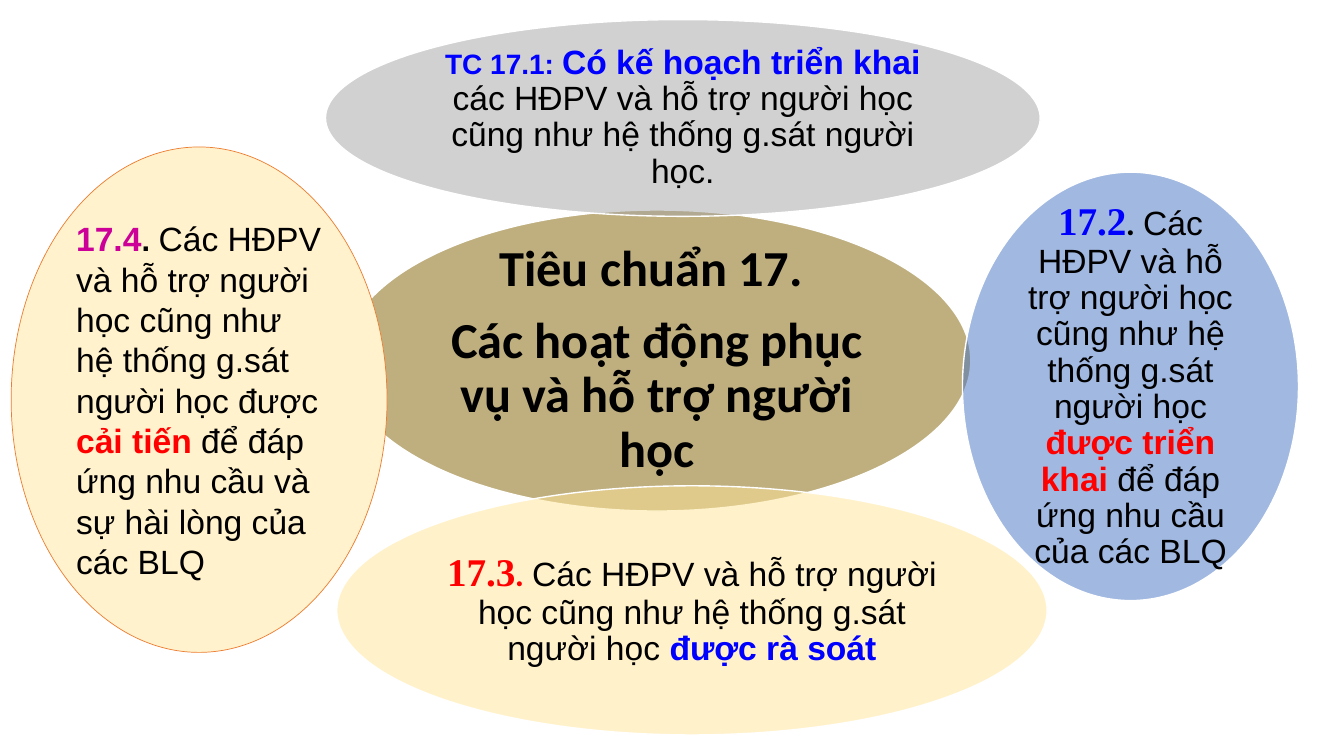
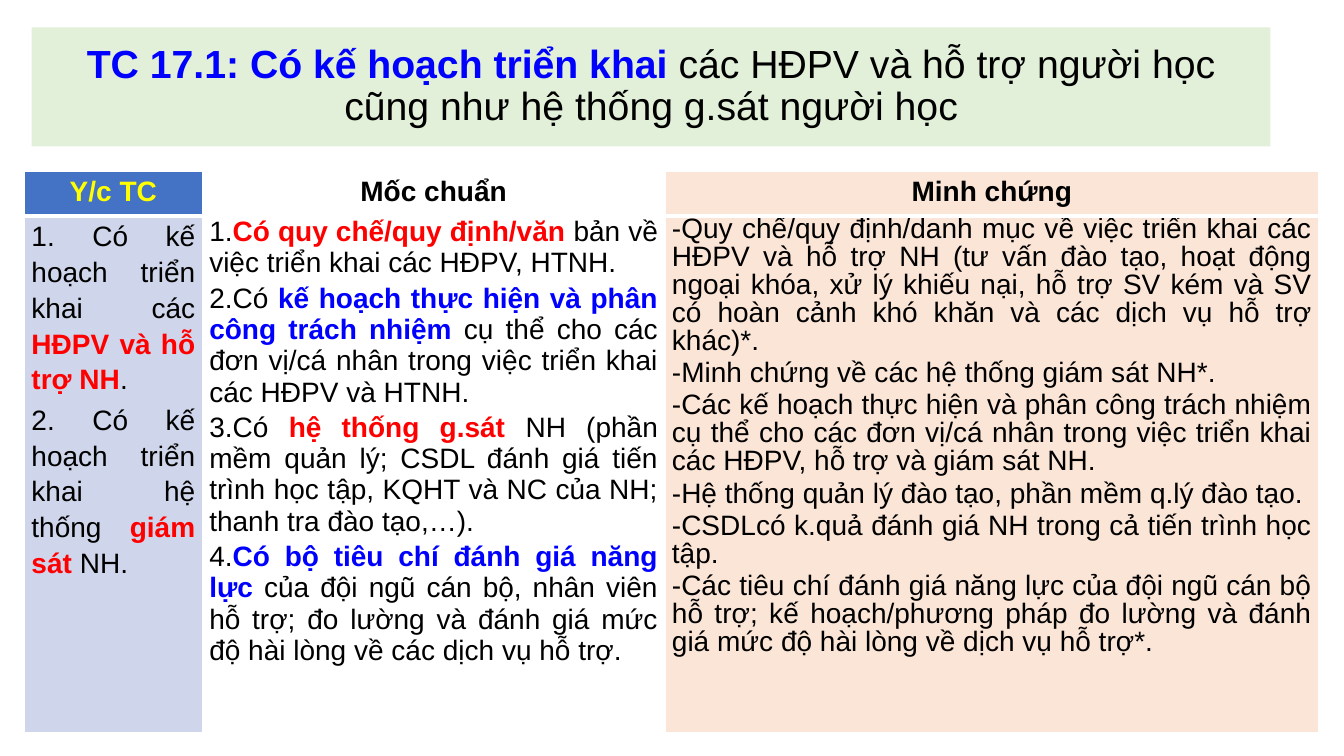
from dataclasses import dataclass, replace

from lxml.etree import SubElement
from pptx import Presentation
from pptx.dml.color import RGBColor
from pptx.enum.shapes import MSO_SHAPE
from pptx.enum.text import MSO_ANCHOR, MSO_AUTO_SIZE, PP_ALIGN
from pptx.oxml.ns import qn
from pptx.util import Pt


@dataclass(frozen=True)
class Theme:
    """Colours, fonts and type sizes of the presentation."""
    white: str = "FFFFFF"
    black: str = "000000"
    blue: str = "0000FF"
    red: str = "FF0000"
    magenta: str = "CC0099"
    yellow: str = "FFFF00"
    olive: str = "806000"
    gray: str = "A5A5A5"
    accent: str = "4472C4"
    gold: str = "FFE699"
    cream: str = "FFF2CC"
    orange: str = "ED7D31"
    mint: str = "E2F0D9"
    peach: str = "FBE5D6"
    lavender: str = "CFD5EA"
    sans: str = "Arial"
    display: str = "Calibri"
    serif: str = "Times New Roman"
    heading_size: int = 36
    title_size: int = 28
    label_size: int = 24
    small_label_size: int = 22
    table_size: int = 20


@dataclass(frozen=True)
class Box:
    """A rectangle in points."""
    left: float
    top: float
    width: float
    height: float

    def inside(self, left, top, width, height):
        """Return a box placed relative to this one."""
        return Box(self.left + left, self.top + top, width, height)

    def lengths(self):
        """Return the four lengths for a shape call."""
        return tuple(Pt(value) for value in (self.left, self.top, self.width, self.height))


@dataclass(frozen=True)
class Style:
    """The look of one run of text."""
    size: int
    font: str = "Arial"
    color: str = "000000"
    bold: bool = False
    italic: bool = False


THEME = Theme()
LABEL = Style(THEME.label_size, THEME.sans, THEME.black)
LABEL_BLUE = replace(LABEL, color=THEME.blue, bold=True)
LABEL_RED = replace(LABEL, color=THEME.red, bold=True)
POINT = replace(LABEL, font=THEME.display, bold=True, italic=True)
NUMBER = Style(THEME.title_size, THEME.serif, THEME.black, bold=True)
HEADING = Style(THEME.heading_size, THEME.display, THEME.black, bold=True)
TITLE = Style(THEME.title_size, THEME.sans, THEME.black)
CELL = Style(THEME.table_size, THEME.sans, THEME.black)
CELL_BOLD = replace(CELL, bold=True)
CELL_RED = replace(CELL_BOLD, color=THEME.red)
CELL_BLUE = replace(CELL_BOLD, color=THEME.blue)


def write_text(frame, paragraphs, alignment, spacing=1.0, before=0, between=0):
    """Fill a text frame from lists of (text, style) runs."""
    for index, runs in enumerate(paragraphs):
        paragraph = frame.add_paragraph() if index else frame.paragraphs[0]
        paragraph.alignment = alignment
        paragraph.line_spacing = spacing
        paragraph.space_before = Pt(before)
        paragraph.space_after = Pt(between if index < len(paragraphs) - 1 else 0)
        for text, style in runs:
            run = paragraph.add_run()
            run.text = text
            run.font.name = style.font
            run.font.size = Pt(style.size)
            run.font.bold = style.bold
            run.font.italic = style.italic
            run.font.color.rgb = RGBColor.from_string(style.color)


def set_margins(holder, horizontal, vertical):
    """Set the inner margins of a text frame or a cell."""
    holder.margin_left = holder.margin_right = Pt(horizontal)
    holder.margin_top = holder.margin_bottom = Pt(vertical)


def add_ellipse(slide, box, fill, line=THEME.white, line_width=1.0, opacity=50):
    """Add an empty ellipse and return it."""
    shape = slide.shapes.add_shape(MSO_SHAPE.OVAL, *box.lengths())
    shape.shadow.inherit = False
    shape.fill.solid()
    shape.fill.fore_color.rgb = RGBColor.from_string(fill)
    if opacity < 100:
        color = shape.element.spPr.find(qn("a:solidFill")).find(qn("a:srgbClr"))
        SubElement(color, qn("a:alpha")).set("val", str(opacity * 1000))
    shape.line.color.rgb = RGBColor.from_string(line)
    shape.line.width = Pt(line_width)
    shape.text_frame.word_wrap = True
    shape.text_frame.vertical_anchor = MSO_ANCHOR.MIDDLE
    return shape


def add_criteria_wheel(slide, box):
    """Place the standard in the middle and its four criteria around it."""
    petals = (
        ((237, 136, 448.5, 215), THEME.olive, [
            [("Tiêu chuẩn 17. ", HEADING)],
            [("Các hoạt động phục vụ và hỗ trợ người học", HEADING)],
        ]),
        ((224.5, 0, 510.5, 140.5), THEME.gray, [[
            ("TC 17.1: ", replace(LABEL_BLUE, size=THEME.table_size)),
            ("Có kế hoạch triển khai ", LABEL_BLUE),
            ("các HĐPV và hỗ trợ người học cũng như hệ thống g.sát người học.", LABEL),
        ]]),
        ((679.5, 109, 240, 306), THEME.accent, [[
            ("17.2", replace(NUMBER, color=THEME.blue)),
            (". ", POINT),
            ("Các HĐPV và hỗ trợ người học cũng như hệ thống g.sát người học ", LABEL),
            ("được triển khai ", LABEL_RED),
            ("để đáp ứng nhu cầu của các BLQ", LABEL),
        ]]),
        ((232.5, 333, 507.5, 178), THEME.gold, [[
            ("17.3", replace(NUMBER, color=THEME.red)),
            (". ", replace(POINT, color=THEME.red)),
            ("Các HĐPV và hỗ trợ người học cũng như hệ thống g.sát người học ", LABEL),
            ("được rà soát", LABEL_BLUE),
        ]]),
    )
    for place, fill, paragraphs in petals:
        frame = add_ellipse(slide, box.inside(*place), fill).text_frame
        set_margins(frame, 3, 3)
        write_text(frame, paragraphs, PP_ALIGN.CENTER, spacing=0.9, between=12.6)

    improvement = add_ellipse(slide, box.inside(0, 91, 268.5, 361), THEME.cream,
                              THEME.orange, 0.5, opacity=100)
    write_text(improvement.text_frame, [
        [
            ("17.4", replace(LABEL, color=THEME.magenta, bold=True)),
            (". ", replace(LABEL, size=THEME.small_label_size, bold=True)),
            ("Các HĐPV", LABEL),
        ],
        [
            ("và hỗ trợ người học cũng như hệ thống g.sát người học được ", LABEL),
            ("cải tiến ", LABEL_RED),
            ("để đáp ứng nhu cầu và sự hài lòng của các BLQ", LABEL),
        ],
    ], PP_ALIGN.LEFT)


def add_title_band(slide, box, runs):
    """Move the title placeholder to the box and write a title on a band."""
    title = slide.shapes.title
    title.left, title.top, title.width, title.height = box.lengths()
    title.fill.solid()
    title.fill.fore_color.rgb = RGBColor.from_string(THEME.mint)
    frame = title.text_frame
    frame.word_wrap = True
    frame.auto_size = MSO_AUTO_SIZE.NONE
    frame.vertical_anchor = MSO_ANCHOR.MIDDLE
    write_text(frame, [runs], PP_ALIGN.CENTER, spacing=0.9)


def paint_cell(cell, fill, bottom_width=1):
    """Give a cell white borders and a solid fill."""
    properties = cell._tc.get_or_add_tcPr()
    for side, width in (("L", 1), ("R", 1), ("T", 1), ("B", bottom_width)):
        border = SubElement(properties, qn(f"a:ln{side}"))
        border.set("w", str(Pt(width)))
        solid = SubElement(border, qn("a:solidFill"))
        SubElement(solid, qn("a:srgbClr")).set("val", THEME.white)
    cell.fill.solid()
    cell.fill.fore_color.rgb = RGBColor.from_string(fill)


def add_criterion_table(slide, box):
    """Place the table of requirements, benchmarks and evidence."""
    requirements = [
        [("1. Có kế hoạch triển khai các ", CELL), ("HĐPV và hỗ trợ NH", CELL_RED), (".", CELL)],
        [("2. Có kế hoạch triển khai hệ thống ", CELL), ("giám sát ", CELL_RED), ("NH.", CELL)],
    ]
    benchmarks = [
        [("1.", CELL), ("Có quy chế/quy định/văn ", CELL_RED),
         ("bản về việc triển khai các HĐPV, HTNH.", CELL)],
        [("2.Có ", CELL), ("kế hoạch thực hiện và phân công trách nhiệm", CELL_BLUE),
         (" cụ thể cho các đơn vị/cá nhân trong việc triển khai các HĐPV và HTNH.", CELL)],
        [("3.Có ", CELL), ("hệ thống g.sát ", CELL_RED),
         ("NH (phần mềm quản lý; CSDL đánh giá tiến trình học tập, KQHT và NC của NH; "
          "thanh tra đào tạo,…).", CELL)],
        [("4.", CELL), ("Có bộ tiêu chí đánh giá năng lực ", CELL_BLUE),
         ("của đội ngũ cán bộ, nhân viên hỗ trợ; đo lường và đánh giá mức độ hài lòng "
          "về các dịch vụ hỗ trợ.", CELL)],
    ]
    evidence = [[(text, CELL)] for text in (
        "-Quy chế/quy định/danh mục về việc triển khai các HĐPV và hỗ trợ NH (tư vấn đào tạo, "
        "hoạt động ngoại khóa, xử lý khiếu nại, hỗ trợ SV kém và SV có hoàn cảnh khó khăn "
        "và các dịch vụ hỗ trợ khác)*.",
        "-Minh chứng về các hệ thống giám sát NH*.",
        "-Các kế hoạch thực hiện và phân công trách nhiệm cụ thể cho các đơn vị/cá nhân "
        "trong việc triển khai các HĐPV, hỗ trợ và giám sát NH.",
        "-Hệ thống quản lý đào tạo, phần mềm q.lý đào tạo.",
        "-CSDLcó k.quả đánh giá NH trong cả tiến trình học tập.",
        "-Các tiêu chí đánh giá năng lực của đội ngũ cán bộ hỗ trợ; kế hoạch/phương pháp "
        "đo lường và đánh giá mức độ hài lòng về dịch vụ hỗ trợ*.",
    )]
    columns = (
        (127, "Y/c TC", THEME.yellow, THEME.accent, THEME.lavender, requirements, 1.15),
        (330.5, "Mốc chuẩn", THEME.black, THEME.white, THEME.white, benchmarks, 1.0),
        (467, "Minh chứng", THEME.black, THEME.peach, THEME.peach, evidence, Pt(20)),
    )
    header_height = 32
    total_width = sum(column[0] for column in columns)
    table = slide.shapes.add_table(2, len(columns), *box.lengths()).table
    table.horz_banding = False
    table.rows[0].height = Pt(header_height)
    table.rows[1].height = Pt(box.height - header_height)
    for index, (width, name, color, header_fill, fill, paragraphs, spacing) in enumerate(columns):
        table.columns[index].width = Pt(box.width * width / total_width)
        header, body = table.cell(0, index), table.cell(1, index)
        paint_cell(header, header_fill, bottom_width=3)
        write_text(header.text_frame, [[(name, replace(CELL_BOLD, color=color))]], PP_ALIGN.CENTER)
        paint_cell(body, fill)
        set_margins(body, 5, 0)
        write_text(body.text_frame, paragraphs, PP_ALIGN.JUSTIFY, spacing, before=3)


def main():
    """Build both slides and save the presentation."""
    presentation = Presentation()
    presentation.slide_width, presentation.slide_height = Pt(960), Pt(540)
    title_only, blank = presentation.slide_layouts[5], presentation.slide_layouts[6]

    add_criteria_wheel(presentation.slides.add_slide(blank), Box(8, 14, 920, 511))

    slide = presentation.slides.add_slide(title_only)
    add_title_band(slide, Box(22.5, 19.5, 885, 85), [
        ("TC 17.1: Có kế hoạch triển khai ", replace(TITLE, color=THEME.blue, bold=True)),
        ("các HĐPV và hỗ trợ người học cũng như hệ thống g.sát người học", TITLE),
    ])
    add_criterion_table(slide, Box(17.5, 122.5, 924.5, 401))

    presentation.save("out.pptx")


if __name__ == "__main__":
    main()
